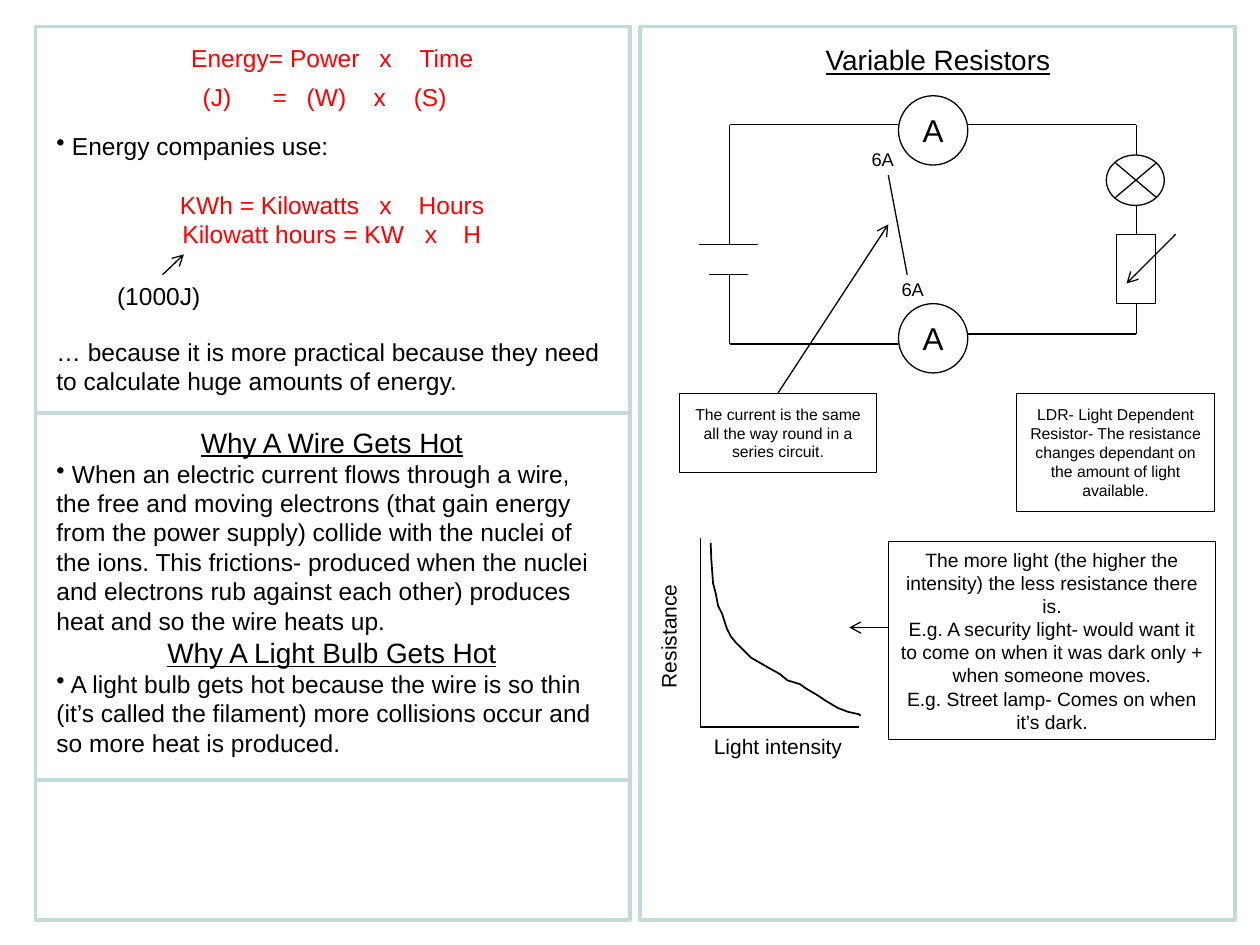
"""Build a revision slide on energy, hot wires and variable resistors."""
from dataclasses import dataclass
from typing import Optional

from lxml.etree import SubElement
from pptx import Presentation
from pptx.dml.color import RGBColor
from pptx.enum.shapes import MSO_CONNECTOR, MSO_SHAPE
from pptx.enum.text import MSO_ANCHOR, MSO_AUTO_SIZE, PP_ALIGN
from pptx.oxml.ns import qn
from pptx.util import Pt

BLACK = RGBColor(0x00, 0x00, 0x00)
WHITE = RGBColor(0xFF, 0xFF, 0xFF)
RED = RGBColor(0xFF, 0x00, 0x00)
PALE_TEAL = RGBColor(0xC3, 0xDA, 0xDB)
BLANK_LINE = 16.8


@dataclass(frozen=True)
class Line:
    text: str
    size: float = 14
    color: RGBColor = BLACK
    align: PP_ALIGN = PP_ALIGN.LEFT
    underline: bool = False
    bullet: bool = False
    before: float = 0
    tabs: tuple[float, ...] = ()


@dataclass(frozen=True)
class Box:
    left: float
    top: float
    width: float
    height: float
    lines: tuple[Line, ...] = ()
    kind: MSO_SHAPE = MSO_SHAPE.RECTANGLE
    fill: Optional[RGBColor] = WHITE
    outline: RGBColor = BLACK
    weight: float = 0.5


@dataclass(frozen=True)
class Stroke:
    x1: float
    y1: float
    x2: float
    y2: float
    color: RGBColor = BLACK
    weight: float = 0.75
    arrow: bool = False


def centered(text: str, size: float, underline: bool = False) -> Line:
    return Line(text, size, align=PP_ALIGN.CENTER, underline=underline)


def formula(terms: str, tabs: tuple[float, ...], before: float = 0) -> Line:
    return Line("\t" + terms, color=RED, tabs=tabs, before=before)


def write_lines(text_frame, lines: tuple[Line, ...]) -> None:
    for index, line in enumerate(lines):
        paragraph = text_frame.add_paragraph() if index else text_frame.paragraphs[0]
        paragraph.text = line.text
        paragraph.alignment = line.align
        properties = paragraph._p.get_or_add_pPr()
        if line.bullet:
            SubElement(properties, qn("a:buChar"), char="•")
        if line.tabs:
            tab_list = SubElement(properties, qn("a:tabLst"))
            for position in line.tabs:
                SubElement(tab_list, qn("a:tab"), pos=str(int(Pt(position))), algn="l")
        if line.before:
            paragraph.space_before = Pt(line.before)
        font = paragraph.font
        font.name, font.size, font.underline = "Arial", Pt(line.size), line.underline
        font.color.rgb = line.color


def draw_box(slide, box: Box):
    shape = slide.shapes.add_shape(
        box.kind, Pt(box.left), Pt(box.top), Pt(box.width), Pt(box.height))
    shape.shadow.inherit = False
    if box.fill is None:
        shape.fill.background()
    else:
        shape.fill.solid()
        shape.fill.fore_color.rgb = box.fill
    shape.line.color.rgb = box.outline
    shape.line.width = Pt(box.weight)
    text_frame = shape.text_frame
    text_frame.word_wrap = True
    text_frame.vertical_anchor = MSO_ANCHOR.MIDDLE
    if box.kind == MSO_SHAPE.OVAL:
        text_frame.margin_left = text_frame.margin_right = 0
    write_lines(text_frame, box.lines)
    return shape


def draw_text(slide, left: float, top: float, width: float, height: float,
              *lines: Line, wrap: bool = True, rotation: float = 0) -> None:
    shape = slide.shapes.add_textbox(Pt(left), Pt(top), Pt(width), Pt(height))
    shape.rotation = rotation
    shape.text_frame.word_wrap = wrap
    shape.text_frame.auto_size = MSO_AUTO_SIZE.SHAPE_TO_FIT_TEXT
    write_lines(shape.text_frame, lines)


def draw_stroke(slide, stroke: Stroke):
    connector = slide.shapes.add_connector(
        MSO_CONNECTOR.STRAIGHT, Pt(stroke.x1), Pt(stroke.y1), Pt(stroke.x2), Pt(stroke.y2))
    connector.line.color.rgb = stroke.color
    connector.line.width = Pt(stroke.weight)
    if stroke.arrow:
        SubElement(connector.line._get_or_add_ln(), qn("a:tailEnd"), type="arrow")
    SubElement(connector._element.spPr, qn("a:effectLst"))
    return connector


def circle(left: float, top: float, label: str, size: float, outline: RGBColor) -> Box:
    return Box(left, top, 39.6, 39.6, (centered(label, size),), MSO_SHAPE.OVAL,
               outline=outline, weight=0.75)


def draw_notes(slide) -> None:
    draw_text(slide, 371.5, 20.9, 329, 43.9, centered("Variable Resistors", 16, True))
    draw_text(slide, 25.2, 20.9, 329, 24.5,
              formula("Energy= Power\tx\tTime", (77, 184.5, 207.5)))
    draw_text(slide, 0, 43.2, 329, 41,
              formula("(J)\t=\t(W)\tx\t(S)", (108.8, 148.8, 168.2, 206.5, 229.4)))
    draw_text(
        slide, 25.2, 71.3, 329, 368.6,
        Line(" Energy companies use:", bullet=True),
        formula("KWh = Kilowatts\tx\tHours", (70.5, 184.5, 207), BLANK_LINE),
        formula("Kilowatt hours = KW\tx\tH", (72, 210.5, 232.5)),
        Line("… because it is more practical because they need to calculate huge "
             "amounts of energy.", before=3 * BLANK_LINE),
        Line("Why A Wire Gets Hot", 16, align=PP_ALIGN.CENTER, underline=True,
             before=BLANK_LINE),
        Line(" When an electric current flows through a wire, the free and moving "
             "electrons (that gain energy from the power supply) collide with the nuclei "
             "of the ions. This frictions- produced when the nuclei and electrons rub "
             "against each other) produces heat and so the wire heats up.", bullet=True),
        centered("Why A Light Bulb Gets Hot", 16, True),
        Line(" A light bulb gets hot because the wire is so thin (it’s called the "
             "filament) more collisions occur and so more heat is produced.", bullet=True))
    draw_text(slide, 59.8, 157, 66.2, 24.5, Line("(1000J)"), wrap=False)
    draw_stroke(slide, Stroke(92.9, 157, 105.1, 145.4, arrow=True))


def draw_circuit(slide) -> None:
    wires = ((513.4, 71.3, 416.9, 71.3), (649.4, 71.3, 553, 71.3),
             (416.9, 139.7, 416.9, 71.3), (433.4, 139.7, 399.6, 139.7),
             (427.7, 157, 405.4, 157), (416.9, 196.6, 416.9, 157),
             (513.4, 196.6, 416.9, 196.6), (649.4, 190.8, 553, 190.8),
             (649.4, 88.6, 649.4, 71.3))
    for wire in wires:
        draw_stroke(slide, Stroke(*wire))
    for top in (173.5, 54.7):
        draw_box(slide, circle(513.4, top, "A", 18, BLACK))
    resistor = draw_box(slide, Box(638.2, 133.9, 22.4, 39.6))
    draw_stroke(slide, Stroke(649.4, 190.8, 649.4, 173.5)).end_connect(resistor, 2)
    draw_stroke(slide, Stroke(649.4, 133.9, 649.4, 116.6)).begin_connect(resistor, 0)
    draw_stroke(slide, Stroke(671.8, 133.9, 643.7, 162, arrow=True))
    draw_box(slide, Box(632.2, 88.6, 33.1, 28.8, kind=MSO_SHAPE.OVAL, weight=0.75))
    for start, end in ((92.9, 113), (113, 92.9)):
        draw_stroke(slide, Stroke(637.2, start, 661, end))
    draw_box(slide, Box(581, 224.6, 113, 67.7, (centered(
        "LDR- Light Dependent Resistor- The resistance changes dependant on the amount "
        "of light available.", 9),)))
    draw_stroke(slide, Stroke(507.6, 100.1, 518.4, 157))
    callout = draw_box(slide, Box(388.1, 224.6, 113, 45.4, (centered(
        "The current is the same all the way round in a series circuit.", 9),)))
    pointer = draw_stroke(slide, Stroke(444.6, 224.6, 507.6, 128.2, arrow=True))
    pointer.begin_connect(callout, 0)


def draw_graph(slide) -> None:
    draw_stroke(slide, Stroke(400.3, 307.4, 400.3, 415.4))
    draw_stroke(slide, Stroke(400.3, 415.4, 491, 415.4))
    curve = ((406.1, 310.3), (406.5, 320), (407.5, 333.4), (409, 339.1), (410.4, 346.3),
             (412.6, 350.6), (415.4, 359.3), (417.6, 363.6), (420.5, 367.2),
             (425.5, 372.2), (429.1, 375.8), (434.2, 378.7), (439.2, 381.6),
             (445.7, 385.2), (450, 388.8), (457.2, 391), (460.1, 393.1), (463.7, 395.3),
             (467.3, 397.4), (471.6, 400.3), (478.8, 404.6), (484.6, 406.8),
             (491, 408.2), (491.8, 409))
    points = [(Pt(x), Pt(y)) for x, y in curve]
    builder = slide.shapes.build_freeform(*points[0])
    builder.add_line_segments(points[1:], close=False)
    shape = builder.convert_to_shape()
    shape.shadow.inherit = False
    shape.fill.background()
    shape.line.color.rgb = BLACK
    shape.line.width = Pt(1)
    draw_box(slide, Box(507.6, 309.6, 187.2, 113, (
        centered("The more light (the higher the intensity) the less resistance there is.", 11),
        centered("E.g. A security light- would want it to come on when it was dark only "
                 "+ when someone moves.", 11),
        centered("E.g. Street lamp- Comes on when it’s dark.", 11))))
    draw_stroke(slide, Stroke(508, 358.6, 485.3, 358.6, arrow=True))
    draw_text(slide, 400.3, 415.4, 88.6, 21.6, centered("Light intensity", 12), wrap=False)
    draw_text(slide, 344.9, 352.8, 74.2, 21.6, centered("Resistance", 12),
              wrap=False, rotation=270)


def main() -> None:
    presentation = Presentation()
    presentation.slide_width, presentation.slide_height = Pt(720), Pt(540)
    slide = presentation.slides.add_slide(presentation.slide_layouts[6])
    for left, top in ((501.8, 145.4), (484.6, 71.3)):
        draw_box(slide, circle(left, top, "6A", 10.5, WHITE))
    for left in (365.8, 20.2):
        draw_box(slide, Box(left, 15.1, 339.8, 510.5, fill=None, outline=PALE_TEAL, weight=2))
    for y in (236.2, 445.7):
        draw_stroke(slide, Stroke(20.2, y, 360, y, PALE_TEAL, 2.25))
    draw_notes(slide)
    draw_circuit(slide)
    draw_graph(slide)
    presentation.save("out.pptx")


if __name__ == "__main__":
    main()
